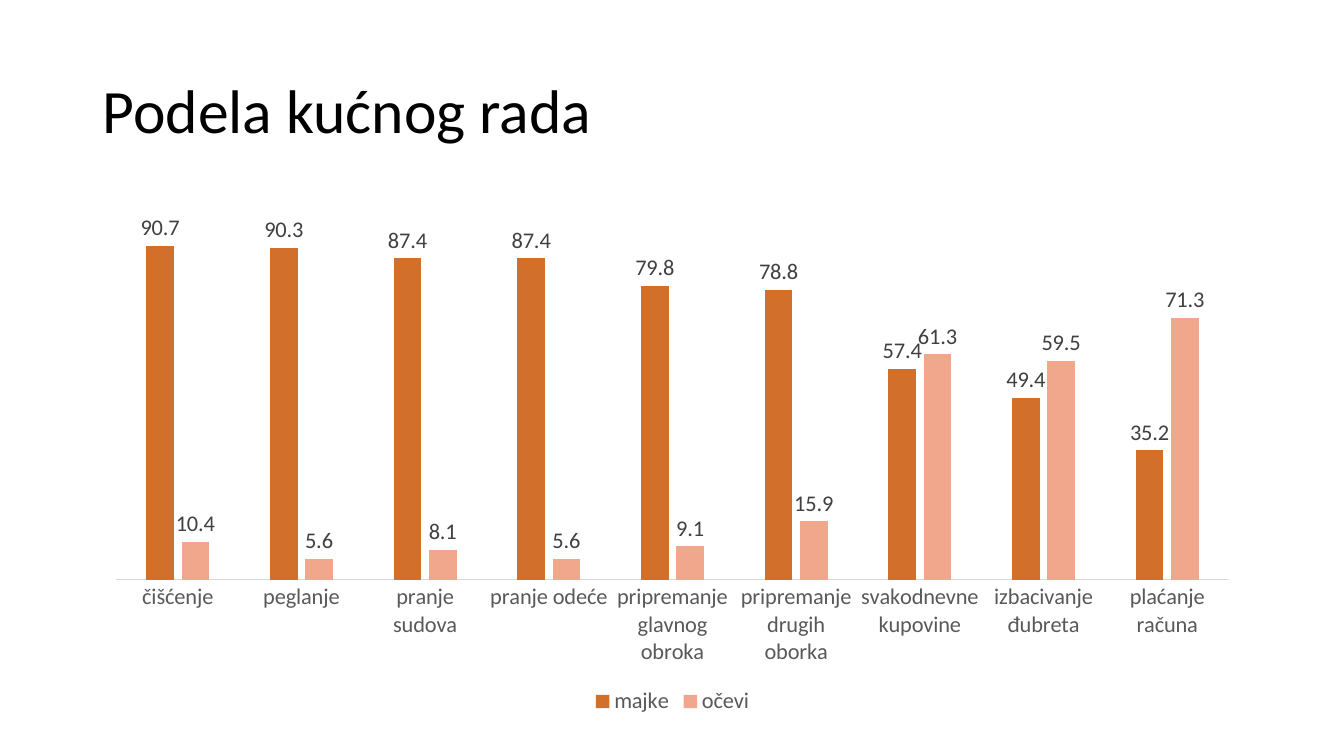
from dataclasses import dataclass
from typing import Any

from pptx import Presentation
from pptx import util as u
from pptx.chart.data import CategoryChartData
from pptx.dml.color import RGBColor
from pptx.enum import chart as ch
from pptx.enum import text


@dataclass(frozen=True)
class Theme:
    font: str = "Calibri"
    title_size: int = 44
    chart_size: int = 16
    title: str = "000000"
    axis_text: str = "595959"
    label_text: str = "404040"
    axis_line: str = "D9D9D9"


@dataclass(frozen=True)
class ParentSeries:
    name: str
    color: str
    values: tuple[float, ...]


THEME = Theme()
CHORES = (
    "čišćenje", "peglanje", "pranje sudova", "pranje odeće",
    "pripremanje glavnog obroka", "pripremanje drugih oborka",
    "svakodnevne kupovine", "izbacivanje đubreta", "plaćanje računa",
)
PARENTS = (
    ParentSeries("majke", "D26F2B", (90.7, 90.3, 87.4, 87.4, 79.8, 78.8, 57.4, 49.4, 35.2)),
    ParentSeries("očevi", "F1A78B", (10.4, 5.6, 8.1, 5.6, 9.1, 15.9, 61.3, 59.5, 71.3)),
)


def set_format(obj: Any, values: dict[str, Any]) -> None:
    for name, value in values.items():
        setattr(obj, name, value)


def set_font(font: Any, size: int, color: str) -> None:
    set_format(font, {"name": THEME.font, "size": u.Pt(size), "bold": False})
    font.color.rgb = RGBColor.from_string(color)


def add_title(s: Any, title: str) -> None:
    sp = s.shapes.add_textbox(u.Inches(0.92), u.Inches(0.4), u.Inches(11.5), u.Inches(1.45))
    tf = sp.text_frame
    set_format(tf, {"word_wrap": True, "vertical_anchor": text.MSO_ANCHOR.MIDDLE})
    p = tf.paragraphs[0]
    p.line_spacing = 0.9
    r = p.add_run()
    r.text = title
    set_font(r.font, THEME.title_size, THEME.title)


def add_chores_chart(s: Any) -> None:
    data = CategoryChartData(number_format="0.0")
    data.categories = CHORES
    for parent in PARENTS:
        data.add_series(parent.name, parent.values)
    chart = s.shapes.add_chart(
        ch.XL_CHART_TYPE.COLUMN_CLUSTERED,
        u.Inches(0.92), u.Inches(2), u.Inches(11.5), u.Inches(5.14), data,
    ).chart
    chart.has_title = False
    set_font(chart.font, THEME.chart_size, THEME.title)

    # Axes
    axis = chart.category_axis
    set_format(axis, {"major_tick_mark": ch.XL_TICK_MARK.NONE, "has_major_gridlines": False})
    set_font(axis.tick_labels.font, THEME.chart_size, THEME.axis_text)
    axis.format.line.color.rgb = RGBColor.from_string(THEME.axis_line)
    axis.format.line.width = u.Pt(0.75)
    set_format(chart.value_axis, {
        "has_major_gridlines": False, "minimum_scale": 0, "maximum_scale": 100, "visible": False,
    })

    # Legend
    chart.has_legend = True
    set_format(chart.legend, {"position": ch.XL_LEGEND_POSITION.BOTTOM, "include_in_layout": False})
    set_font(chart.legend.font, THEME.chart_size, THEME.axis_text)

    # Columns and their values
    plot = chart.plots[0]
    set_format(plot, {"gap_width": 219, "overlap": -27, "vary_by_categories": False})
    for series, parent in zip(plot.series, PARENTS):
        series.format.fill.solid()
        series.format.fill.fore_color.rgb = RGBColor.from_string(parent.color)
        labels = series.data_labels
        set_format(labels, {"show_value": True, "position": ch.XL_LABEL_POSITION.OUTSIDE_END})
        set_font(labels.font, THEME.chart_size, THEME.label_text)


def main() -> None:
    prs = Presentation()
    set_format(prs, {"slide_width": u.Inches(13.33), "slide_height": u.Inches(7.5)})
    s = prs.slides.add_slide(prs.slide_layouts[6])
    add_title(s, "Podela kućnog rada")
    add_chores_chart(s)
    prs.save("out.pptx")


if __name__ == "__main__":
    main()
